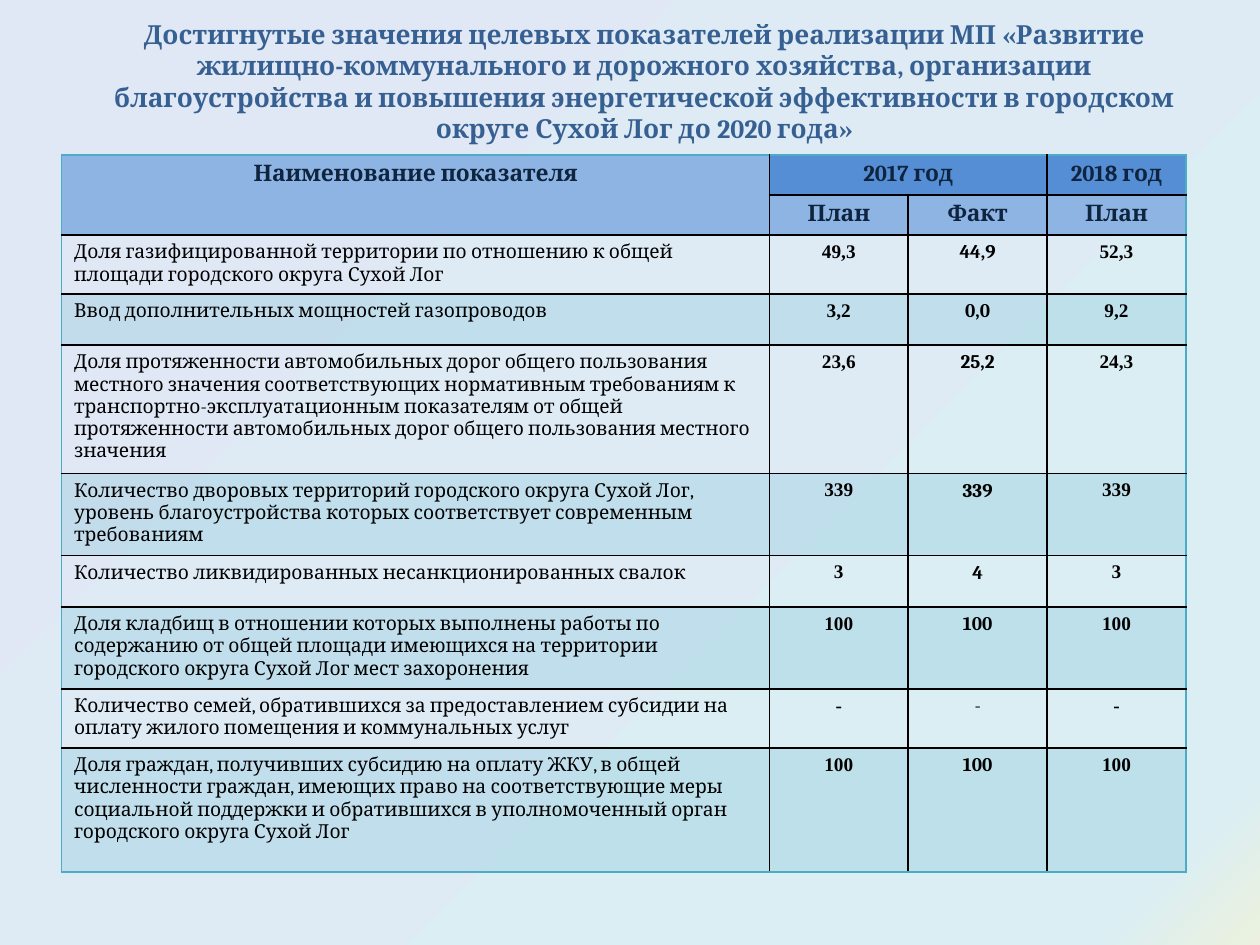
from pptx import Presentation
from pptx.dml.color import RGBColor
from pptx.enum.text import MSO_ANCHOR, PP_ALIGN
from pptx.oxml import parse_xml
from pptx.oxml.ns import nsdecls, qn
from pptx.util import Cm, Pt
from lxml.etree import SubElement


def color(value):
    return RGBColor.from_string(value)


def style(p, size, name, value, bold, align):
    p.alignment = align
    p.font.size = Pt(size)
    p.font.name = name
    p.font.bold = bold
    p.font.color.rgb = color(value)


TITLE = "Достигнутые значения целевых показателей реализации МП «Развитие жилищно-коммунального и дорожного хозяйства, организации благоустройства и повышения энергетической эффективности в городском округе Сухой Лог до 2020 года»"
ROWS = [
    ("Наименование показателя", "2017 год", "", "2018 год"),
    ("", "План", "Факт", "План"),
    ("Доля газифицированной территории по отношению к общей площади городского округа Сухой Лог", "49,3", "44,9", "52,3"),
    ("Ввод дополнительных мощностей газопроводов", "3,2", "0,0", "9,2"),
    ("Доля протяженности автомобильных дорог общего пользования местного значения соответствующих нормативным требованиям к транспортно-эксплуатационным показателям от общей протяженности автомобильных дорог общего пользования местного значения", "23,6", "25,2", "24,3"),
    ("Количество дворовых территорий городского округа Сухой Лог, уровень благоустройства которых соответствует современным требованиям", "339", "339", "339"),
    ("Количество ликвидированных несанкционированных свалок", "3", "4", "3"),
    ("Доля кладбищ в отношении которых выполнены работы по содержанию от общей площади имеющихся на территории городского округа Сухой Лог мест захоронения", "100", "100", "100"),
    ("Количество семей, обратившихся за предоставлением субсидии на оплату жилого помещения и коммунальных услуг", "-", "-", "-"),
    ("Доля граждан, получивших субсидию на оплату ЖКУ, в общей численности граждан, имеющих право на соответствующие меры социальной поддержки и обратившихся в уполномоченный орган городского округа Сухой Лог", "100", "100", "100"),
]
WIDTHS = [14.27, 2.8, 2.8, 2.8]
HEIGHTS = [0.81, 0.81, 1.15, 1.03, 2.5, 1.59, 1.04, 1.6, 1.15, 2.5]
BLACK, TEAL = "000000", "4BACC6"

prs = Presentation()
prs.slide_width, prs.slide_height = Cm(25.4), Cm(19.05)
s = prs.slides.add_slide(prs.slide_layouts[6])

fill = s.background.fill
fill.gradient()
grad = s.background.fill._xPr.find(qn("a:gradFill"))
stops = grad.find(qn("a:gsLst"))
for stop in list(stops):
    stops.remove(stop)
for pos, value in [(0, "EBF1DE"), (8, "DBEEF4"), (100, "E1E8F5")]:
    stop = SubElement(stops, qn("a:gs"), pos=str(pos * 1000))
    SubElement(stop, qn("a:srgbClr"), val=value)
grad.find(qn("a:lin")).set("ang", str(225 * 60000))

tf = s.shapes.add_textbox(Cm(1.3), Cm(0.33), Cm(23.39), Cm(2.6)).text_frame
tf.word_wrap = True
tf.vertical_anchor = MSO_ANCHOR.MIDDLE
p = tf.paragraphs[0]
p.text = TITLE
style(p, 15, "Cambria", "376092", True, PP_ALIGN.CENTER)

table = s.shapes.add_table(len(ROWS), len(WIDTHS), Cm(1.24), Cm(3.12),
                           Cm(sum(WIDTHS)), Cm(sum(HEIGHTS))).table
table.first_row = table.horz_banding = False
for col, width in zip(table.columns, WIDTHS):
    col.width = Cm(width)
for row, height in zip(table.rows, HEIGHTS):
    row.height = Cm(height)

last_row, last_col = len(ROWS) - 1, len(WIDTHS) - 1
for i, row in enumerate(ROWS):
    for j, text in enumerate(row):
        cell = table.cell(i, j)
        p = cell.text_frame.paragraphs[0]
        p.text = text
        if i < 2:
            style(p, 13, "Cambria", "0F243E", True, PP_ALIGN.CENTER)
        elif j == 0:
            style(p, 11, "Cambria", BLACK, False, PP_ALIGN.LEFT)
        else:
            font = "Cambria" if j == 2 else "Times New Roman"
            bold = not (j == 2 and text == "-")
            style(p, 11, font, BLACK, bold, PP_ALIGN.CENTER)

        tcPr = cell._tc.get_or_add_tcPr()
        if i >= 2 and i % 2 == 0:
            cell.fill.background()
        else:
            cell.fill.solid()
            header = "558ED5" if i == 0 and j > 0 else "8EB4E3"
            cell.fill.fore_color.rgb = color(header if i < 2 else TEAL)
            if i >= 2:
                clr = tcPr.find(qn("a:solidFill")).find(qn("a:srgbClr"))
                SubElement(clr, qn("a:alpha"), val="20000")

        edges = [("L", j == 0), ("R", j == last_col), ("T", i == 0), ("B", i == last_row)]
        for k, (side, outer) in enumerate(edges):
            tcPr.insert(k, parse_xml(
                f'<a:ln{side} {nsdecls("a")} w="12700"><a:solidFill>'
                f'<a:srgbClr val="{TEAL if outer else BLACK}"/></a:solidFill></a:ln{side}>'))

table.cell(0, 0).merge(table.cell(1, 0))
table.cell(0, 1).merge(table.cell(0, 2))

prs.save("out.pptx")
